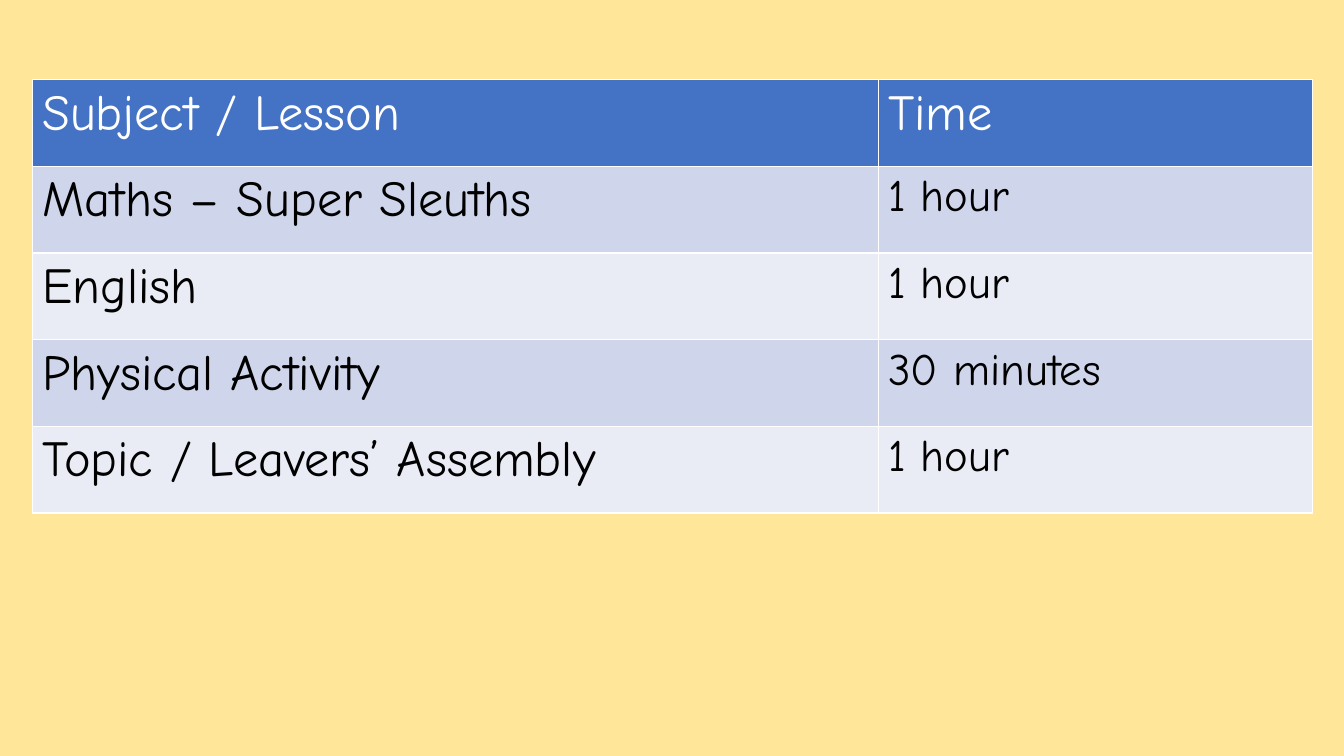
"""Build a one-slide timetable of lessons and their lengths."""
from dataclasses import dataclass

from pptx import Presentation
from pptx import util as u
from pptx.dml.color import RGBColor

WIDE, HIGH = 13.33, 7.5
LEFT, TOP = 0.32, 0.79
COLS = (8.39, 4.31)
ROW = 0.86
FONT = "Comic Neue"
HEAD, BANDS = "4472C4", ("CFD5EA", "E9EBF5")


@dataclass(frozen=True)
class Lesson:
    name: str
    time: str


LESSONS = (
    Lesson("Maths – Super Sleuths", "1 hour"),
    Lesson("English", "1 hour"),
    Lesson("Physical Activity", "30 minutes"),
    Lesson("Topic / Leavers’ Assembly", "1 hour"),
)


def paint(fill, shade: str) -> None:
    fill.solid()
    fill.fore_color.rgb = RGBColor.from_string(shade)


def write(cell, words: str, size: int, ink: str, shade: str) -> None:
    paint(cell.fill, shade)
    cell.text = words
    font = cell.text_frame.paragraphs[0].font
    font.name, font.size, font.bold = FONT, u.Pt(size), False
    font.color.rgb = RGBColor.from_string(ink)


def main() -> None:
    deck = Presentation()
    deck.slide_width, deck.slide_height = u.Inches(WIDE), u.Inches(HIGH)
    slide = deck.slides.add_slide(deck.slide_layouts[6])
    paint(slide.background.fill, "FFE699")

    count = len(LESSONS) + 1
    table = slide.shapes.add_table(
        count, len(COLS), u.Inches(LEFT), u.Inches(TOP),
        u.Inches(sum(COLS)), u.Inches(ROW * count)).table
    for col, width in zip(table.columns, COLS):
        col.width = u.Inches(width)
    for row in table.rows:
        row.height = u.Inches(ROW)

    for col, title in enumerate(("Subject / Lesson", "Time")):
        write(table.cell(0, col), title, 36, "FFFFFF", HEAD)
    for num, item in enumerate(LESSONS):
        shade = BANDS[num % 2]
        write(table.cell(num + 1, 0), item.name, 36, "000000", shade)
        write(table.cell(num + 1, 1), item.time, 32, "000000", shade)
    deck.save("out.pptx")


if __name__ == "__main__":
    main()
